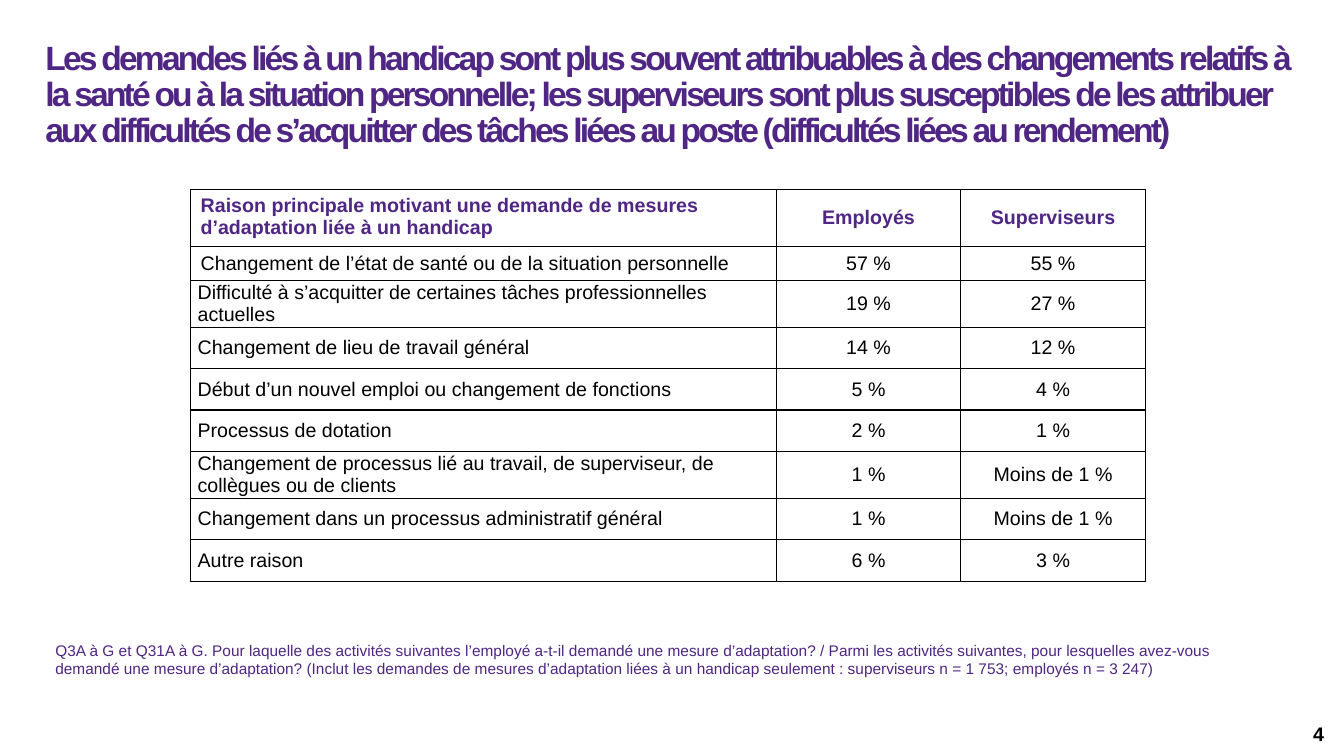
from dataclasses import dataclass

from lxml.etree import SubElement
from pptx import Presentation
from pptx.dml.color import RGBColor
from pptx.enum.text import MSO_ANCHOR as Anchor, MSO_AUTO_SIZE as AutoSize, PP_ALIGN as Align
from pptx.oxml.ns import qn
from pptx.util import Inches, Pt


@dataclass(frozen=True)
class Theme:
    font: str = "Arial"
    purple: str = "4F2684"
    black: str = "000000"
    white: str = "FFFFFF"
    title: int = 24
    body: int = 14
    note: int = 11


theme = Theme()


def add_run(p, text, size, color, bold=False):
    r = p.add_run()
    r.text = text
    r.font.name = theme.font
    r.font.size = Pt(size)
    r.font.bold = bold
    r.font.color.rgb = RGBColor.from_string(color)
    return r


def add_borders(cell, color):
    tc_pr = cell._tc.get_or_add_tcPr()
    for side in ("lnL", "lnR", "lnT", "lnB"):
        ln = SubElement(tc_pr, qn(f"a:{side}"), w=str(Pt(1)))
        fill = SubElement(ln, qn("a:solidFill"))
        SubElement(fill, qn("a:srgbClr"), val=color)


prs = Presentation()
prs.slide_width = Inches(13.33)
prs.slide_height = Inches(7.5)
slide = prs.slides.add_slide(prs.slide_layouts[5])

title = slide.shapes.title
title.left, title.top = Inches(0.45), Inches(0.39)
title.width, title.height = Inches(12.35), Inches(1.13)
tf = title.text_frame
tf.word_wrap = True
tf.auto_size = AutoSize.SHAPE_TO_FIT_TEXT
tf.vertical_anchor = Anchor.TOP
tf.margin_left = tf.margin_right = 0
tf.margin_top = tf.margin_bottom = Inches(0.02)
p = tf.paragraphs[0]
p.alignment = Align.LEFT
p.line_spacing = 0.9
r = add_run(
    p,
    "Les demandes liés à un handicap sont plus souvent attribuables à des changements "
    "relatifs à la santé ou à la situation personnelle; les superviseurs sont plus "
    "susceptibles de les attribuer aux difficultés de s’acquitter des tâches liées au "
    "poste (difficultés liées au rendement)",
    theme.title, theme.purple, True,
)
r.font._element.set("spc", "-200")

rows = [
    ("Raison principale motivant une demande de mesures d’adaptation liée à un handicap",
     "Employés", "Superviseurs"),
    ("Changement de l’état de santé ou de la situation personnelle", "57 %", "55 %"),
    ("Difficulté à s’acquitter de certaines tâches professionnelles actuelles", "19 %", "27 %"),
    ("Changement de lieu de travail général", "14 %", "12 %"),
    ("Début d’un nouvel emploi ou changement de fonctions", "5 %", "4 %"),
    ("Processus de dotation", "2 %", "1 %"),
    ("Changement de processus lié au travail, de superviseur, de collègues ou de clients",
     "1 %", "Moins de 1 %"),
    ("Changement dans un processus administratif général", "1 %", "Moins de 1 %"),
    ("Autre raison", "6 %", "3 %"),
]
table = slide.shapes.add_table(
    len(rows), 3, Inches(1.89), Inches(1.88), Inches(9.47), Inches(3.56)
).table
table.first_row = False
table.horz_banding = False
for column, width in zip(table.columns, (5.81, 1.83, 1.83)):
    column.width = Inches(width)
for i, row in enumerate(rows):
    table.rows[i].height = Inches(0.28 if i == 1 else 0.41)
    for j, text in enumerate(row):
        cell = table.cell(i, j)
        add_borders(cell, theme.black)
        p = cell.text_frame.paragraphs[0]
        p.alignment = Align.CENTER if j else Align.LEFT
        cell.vertical_anchor = Anchor.MIDDLE if i or j else Anchor.TOP
        if i == 0:
            cell.fill.background()
        else:
            cell.fill.solid()
            cell.fill.fore_color.rgb = RGBColor.from_string(theme.white)
        if i > 1:
            cell.margin_left = cell.margin_right = Inches(0.07)
            cell.margin_top = cell.margin_bottom = 0
            p.space_after = Pt(5.1)
        add_run(p, text, theme.body, theme.black if i else theme.purple, i == 0)

note = slide.shapes.add_textbox(Inches(0.45), Inches(6.31), Inches(11.82), Inches(0.47))
tf = note.text_frame
tf.word_wrap = True
tf.auto_size = AutoSize.SHAPE_TO_FIT_TEXT
add_run(
    tf.paragraphs[0],
    "Q3A à G et Q31A à G. Pour laquelle des activités suivantes l’employé a-t-il demandé "
    "une mesure d’adaptation? / Parmi les activités suivantes, pour lesquelles avez-vous "
    "demandé une mesure d’adaptation? (Inclut les demandes de mesures d’adaptation liées "
    "à un handicap seulement : superviseurs n = 1 753; employés n = 3 247)",
    theme.note, theme.purple,
)

number = slide.shapes.add_textbox(Inches(10.23), Inches(7.08), Inches(3), Inches(0.4))
tf = number.text_frame
tf.word_wrap = True
tf.vertical_anchor = Anchor.MIDDLE
p = tf.paragraphs[0]
p.alignment = Align.RIGHT
add_run(p, "4", theme.body, theme.black, True)

prs.save("out.pptx")
